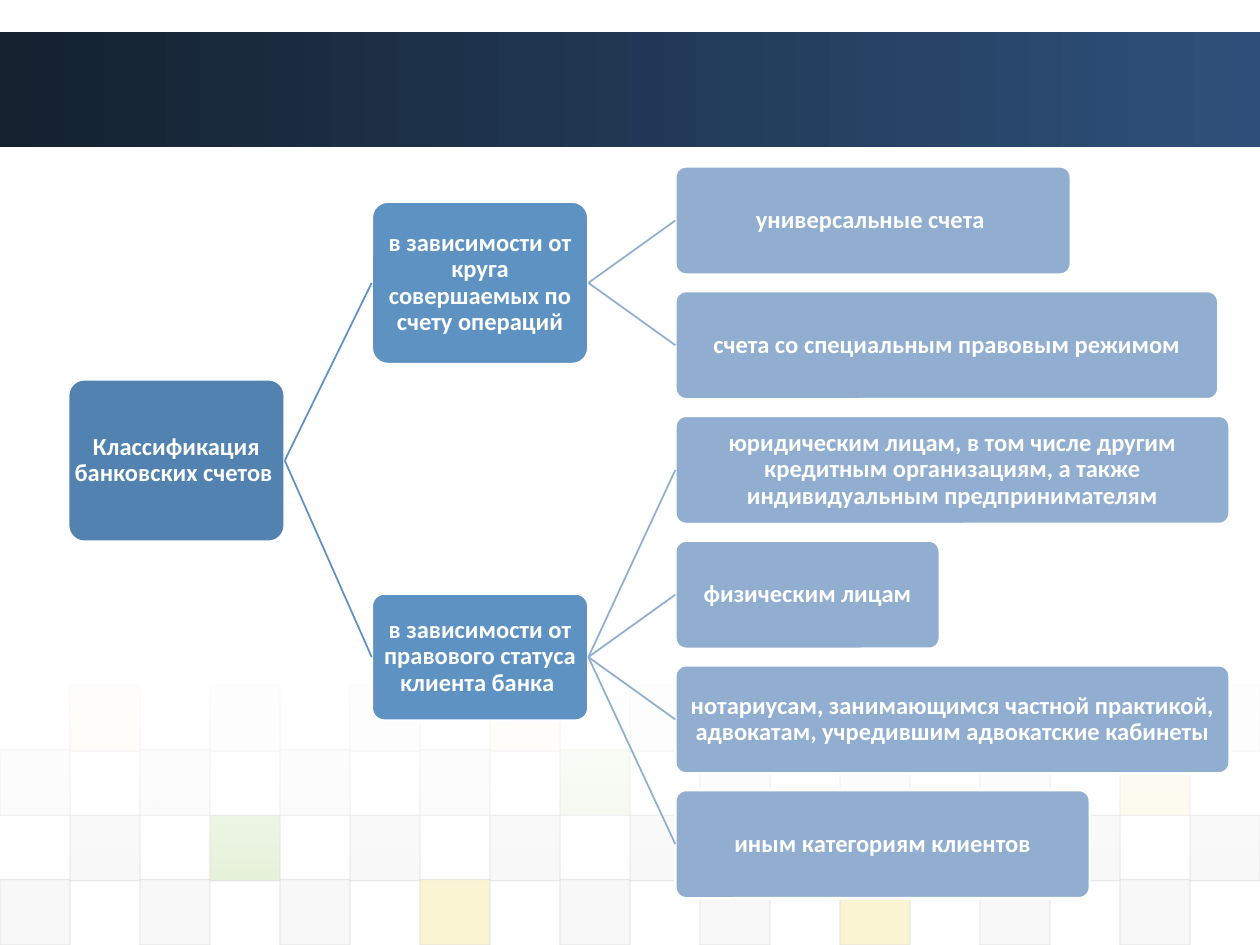
from lxml.etree import SubElement
from pptx import Presentation
from pptx.dml.color import RGBColor
from pptx.enum.shapes import MSO_CONNECTOR, MSO_SHAPE
from pptx.enum.text import MSO_ANCHOR, PP_ALIGN
from pptx.oxml.ns import qn
from pptx.util import Inches, Pt

HUES = {"D": "DDDDDD", "E": "EAEAEA", "Y": "EFC821", "G": "8AC246"}
ROWS = [
    (5.44, 5, 1, "YEEYD---E"),
    (5.95, 10, 0, "DDDDGDDDY"),
    (6.47, 20, 1, "DGDDD--DD"),
    (6.98, 20, 0, "DDDYDDYDD"),
]
STEP = 10 / 18
ROOT = "Классификация банковских счетов "
GROUPS = [
    ("в зависимости от круга совершаемых по счету операций", 1.6, 1.29, [
        ("универсальные счета ", 3.14),
        ("счета со специальным правовым режимом", 4.31),
    ]),
    ("в зависимости от правового статуса клиента банка ", 4.71, 1.01, [
        ("юридическим лицам, в том числе другим кредитным организациям, "
         "а также индивидуальным предпринимателям", 4.4),
        ("физическим лицам", 2.1),
        ("нотариусам, занимающимся частной практикой, "
         "адвокатам, учредившим адвокатские кабинеты", 4.4),
        ("иным категориям клиентов", 3.29),
    ]),
]


def paint(color, code, alpha=100):
    color.rgb = RGBColor.from_string(code)
    if alpha < 100:
        node = color._xFill if hasattr(color, "_xFill") else color
        for item in node.iter(qn("a:srgbClr")):
            SubElement(item, qn("a:alpha")).set("val", str(alpha * 1000))


def fade(node, alpha):
    for item in node.iter(qn("a:srgbClr")):
        SubElement(item, qn("a:alpha")).set("val", str(alpha * 1000))


def add_block(slide, kind, left, top, width, height):
    block = slide.shapes.add_shape(
        kind, Inches(left), Inches(top), Inches(width), Inches(height))
    block.shadow.inherit = False
    return block


def add_blend(slide, top, height, angle, stops):
    band = add_block(slide, MSO_SHAPE.RECTANGLE, 0, top, 10, height)
    band.line.fill.background()
    band.fill.gradient()
    band.fill.gradient_angle = angle
    nodes = band._element.spPr.findall(".//" + qn("a:gs"))
    for stop, node, (code, alpha) in zip(band.fill.gradient_stops, nodes, stops):
        paint(stop.color, code)
        fade(node, alpha)


def add_tile(slide, left, top, code, alpha):
    tile = add_block(slide, MSO_SHAPE.RECTANGLE, left, top, STEP, 0.52)
    tile.fill.solid()
    paint(tile.fill.fore_color, code)
    fade(tile._element.spPr.find(qn("a:solidFill")), alpha)
    tile.line.width = Pt(0.75)
    paint(tile.line.color, HUES["D"])
    fade(tile._element.spPr.find(qn("a:ln")), 60)


def add_tiles(slide):
    for top, alpha, first, marks in ROWS:
        for place, mark in enumerate(marks):
            if mark in HUES:
                left = (first + 2 * place) * STEP
                add_tile(slide, left, top, HUES[mark], alpha)


def add_node(slide, text, left, top, width, height, code):
    node = add_block(slide, MSO_SHAPE.ROUNDED_RECTANGLE, left, top, width, height)
    node.adjustments[0] = 0.1
    node.fill.solid()
    paint(node.fill.fore_color, code)
    node.line.width = Pt(1.5)
    paint(node.line.color, "FFFFFF")
    frame = node.text_frame
    frame.word_wrap = True
    frame.vertical_anchor = MSO_ANCHOR.MIDDLE
    frame.margin_left = frame.margin_right = Inches(0.01)
    frame.margin_top = frame.margin_bottom = Inches(0.01)
    frame.text = text
    para = frame.paragraphs[0]
    para.alignment = PP_ALIGN.CENTER
    para.line_spacing = 0.9
    font = para.runs[0].font
    font.name = "Calibri"
    font.size = Pt(14)
    font.bold = True
    paint(font.color, "FFFFFF")
    return node


def add_link(slide, start, end, code):
    link = slide.shapes.add_connector(
        MSO_CONNECTOR.STRAIGHT,
        start.left + start.width, start.top + start.height // 2,
        end.left, end.top + end.height // 2)
    link.line.width = Pt(1)
    paint(link.line.color, code)
    SubElement(link._element.spPr, qn("a:effectLst"))


def add_tree(slide):
    root = add_node(slide, ROOT, 0.54, 3.01, 1.72, 1.29, "5283B0")
    top = 1.32
    for text, high, tall, leaves in GROUPS:
        group = add_node(slide, text, 2.95, high, 1.72, tall, "5E92C3")
        add_link(slide, root, group, "5E92C3")
        for label, width in leaves:
            leaf = add_node(slide, label, 5.36, top, width, 0.86, "91AED0")
            add_link(slide, group, leaf, "91AED0")
            top += 0.99


def main():
    deck = Presentation()
    deck.slide_width = Inches(10)
    deck.slide_height = Inches(7.5)
    slide = deck.slides.add_slide(deck.slide_layouts[6])
    add_blend(slide, 0.25, 0.92, 0, [("14212F", 100), ("2E507A", 100)])
    add_tiles(slide)
    add_blend(slide, 5.37, 1.62, 270, [("FFFFFF", 90), ("FFFFFF", 0)])
    add_tree(slide)
    deck.save("out.pptx")


if __name__ == "__main__":
    main()
